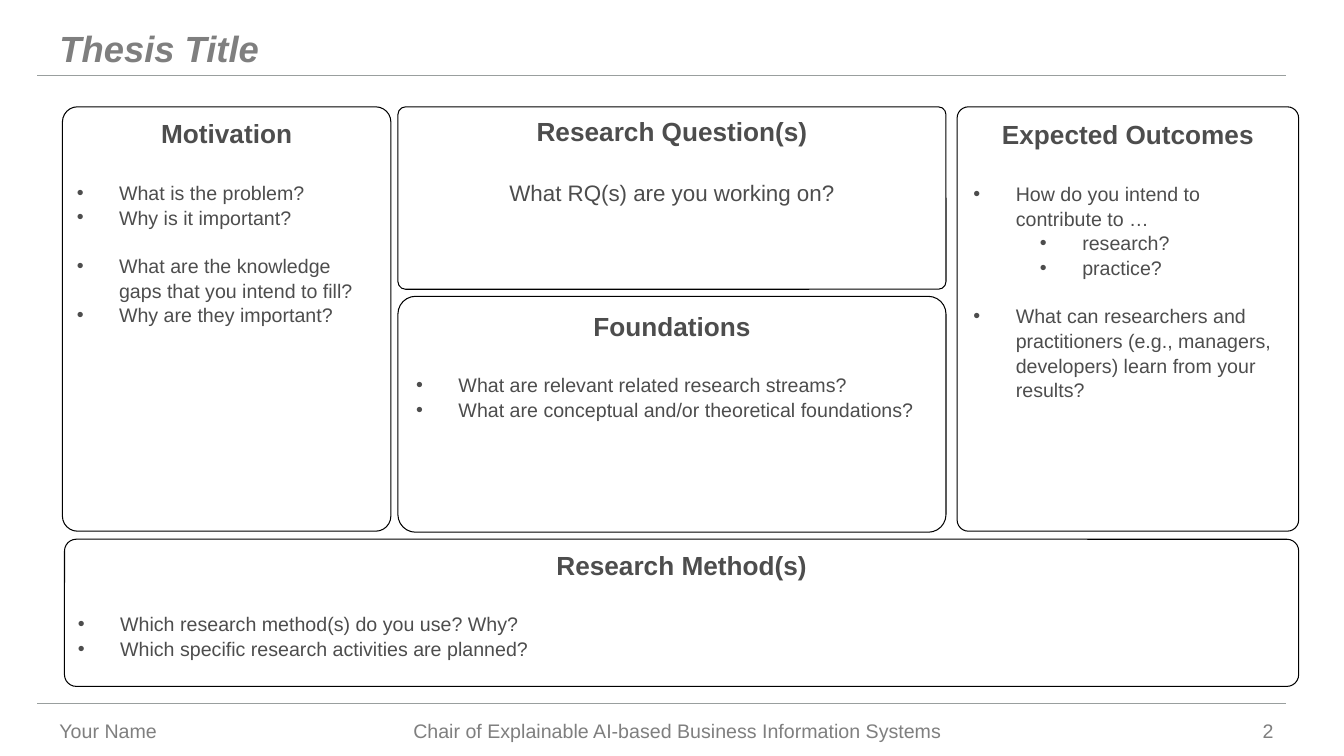
from lxml import etree
from pptx import Presentation
from pptx.dml.color import RGBColor
from pptx.enum.shapes import MSO_CONNECTOR as Connector, MSO_SHAPE as Shape
from pptx.enum.text import MSO_ANCHOR as Anchor, PP_ALIGN as Align
from pptx.oxml.ns import qn
from pptx.util import Inches, Pt

COLORS = {"rule": "999F9E", "muted": "7F7F7F", "text": "4D4D4D",
          "border": "000000", "panel": "FFFFFF"}
NARROW, WIDE = (0.1, 0.05), (0.13, 0.07)
HANGING = 0.42
LEVEL_INDENTS = (0.42, 1.08)


def color(name):
    return RGBColor.from_string(COLORS[name])


class CanvasSlide:
    """Holds the page and the shared style of its elements."""
    font_name = "Arial"

    def __init__(self, page):
        self.page = page

    def style(self, para, size, tone, bold=False, italic=False):
        font = para.font
        font.name, font.size = self.font_name, Pt(size)
        font.bold, font.italic = bold, italic
        font.color.rgb = color(tone)

    def frame(self, box, insets, anchor):
        frame = box.text_frame
        frame.word_wrap = True
        frame.vertical_anchor = anchor
        frame.margin_left = frame.margin_right = Inches(insets[0])
        frame.margin_top = frame.margin_bottom = Inches(insets[1])
        return frame

    def rule(self, top):
        line = self.page.shapes.add_connector(
            Connector.STRAIGHT, Inches(0.37), Inches(top), Inches(12.76), Inches(top))
        line.line.color.rgb = color("rule")
        line.line.width = Pt(0.75)
        etree.SubElement(line._element.spPr, qn("a:effectLst"))

    def label(self, text, place, size=14, align=Align.LEFT, anchor=Anchor.MIDDLE,
              spacing=None, **emphasis):
        box = self.page.shapes.add_textbox(*map(Inches, place))
        para = self.frame(box, (0.12, 0.06), anchor).paragraphs[0]
        para.text = text
        para.alignment = align
        para.line_spacing = spacing
        self.style(para, size, "muted", **emphasis)

    def bullet(self, para, level):
        para.level = level
        props = para._p.get_or_add_pPr()
        props.set("marL", str(Inches(LEVEL_INDENTS[level])))
        props.set("indent", str(-Inches(HANGING)))
        etree.SubElement(props, qn("a:buFont"), typeface=self.font_name)
        etree.SubElement(props, qn("a:buChar"), char="•")

    def panel(self, heading, place, corner, insets):
        """Draw a rounded box with its heading and return the text frame."""
        box = self.page.shapes.add_shape(Shape.ROUNDED_RECTANGLE, *map(Inches, place))
        box.adjustments[0] = corner
        box.shadow.inherit = False
        box.fill.solid()
        box.fill.fore_color.rgb = color("panel")
        box.line.color.rgb = color("border")
        box.line.width = Pt(0.75)
        frame = self.frame(box, insets, Anchor.TOP)
        para = frame.paragraphs[0]
        para.text = heading
        para.alignment = Align.CENTER
        para.line_spacing = 1.05
        para.space_after = Pt(21.7)
        self.style(para, 18.7, "text", bold=True)
        return frame

    def body(self, frame, groups):
        """Add groups of (level, text) bullets, with a gap between groups."""
        for number, group in enumerate(groups):
            for position, (level, text) in enumerate(group):
                para = frame.add_paragraph()
                para.text = text
                self.bullet(para, level)
                para.alignment = Align.LEFT
                para.line_spacing = 1.05
                para.space_before = Pt(16.9 if number and not position else 0)
                self.style(para, 14, "text")

    def question(self, frame, text):
        para = frame.add_paragraph()
        para.text = text
        para.alignment = Align.CENTER
        para.line_spacing = 1.05
        self.style(para, 16, "text")


BULLET_PANELS = [
    ("Motivation", (0.62, 1.06, 3.26, 4.21), 0.046, NARROW, [
        [(0, "What is the problem?"), (0, "Why is it important?")],
        [(0, "What are the knowledge gaps that you intend to fill?"),
         (0, "Why are they important?")]]),
    ("Foundations", (3.95, 2.94, 5.44, 2.34), 0.075, WIDE, [
        [(0, "What are relevant related research streams?"),
         (0, "What are conceptual and/or theoretical foundations?")]]),
    ("Expected Outcomes", (9.5, 1.06, 3.39, 4.21), 0.033, WIDE, [
        [(0, "How do you intend to contribute to …"),
         (1, "research?"), (1, "practice?")],
        [(0, "What can researchers and practitioners (e.g., managers, "
             "developers) learn from your results?")]]),
    ("Research Method(s)", (0.64, 5.35, 12.25, 1.46), 0.08, NARROW, [
        [(0, "Which research method(s) do you use? Why?"),
         (0, "Which specific research activities are planned?")]]),
]


def main():
    deck = Presentation()
    deck.slide_width, deck.slide_height = Inches(13.34), Inches(7.5)
    canvas = CanvasSlide(deck.slides.add_slide(deck.slide_layouts[6]))

    for top in (6.98, 0.75):
        canvas.rule(top)
    canvas.label("Your Name", (0.47, 7.05, 2.52, 0.39))
    canvas.label("Chair of Explainable AI-based Business Information Systems",
                 (2.95, 7.05, 7.55, 0.39), align=Align.CENTER)
    canvas.label("2", (11.97, 7.05, 0.79, 0.39), align=Align.RIGHT)
    canvas.label("Thesis Title", (0.47, 0.19, 9.45, 0.56), size=26,
                 anchor=Anchor.BOTTOM, spacing=Pt(14.3), bold=True, italic=True)

    for heading, place, corner, insets, groups in BULLET_PANELS:
        canvas.body(canvas.panel(heading, place, corner, insets), groups)
    questions = canvas.panel("Research Question(s)", (3.95, 1.06, 5.44, 1.81), 0.042, NARROW)
    canvas.question(questions, "What RQ(s) are you working on?")

    deck.save("out.pptx")


if __name__ == "__main__":
    main()
